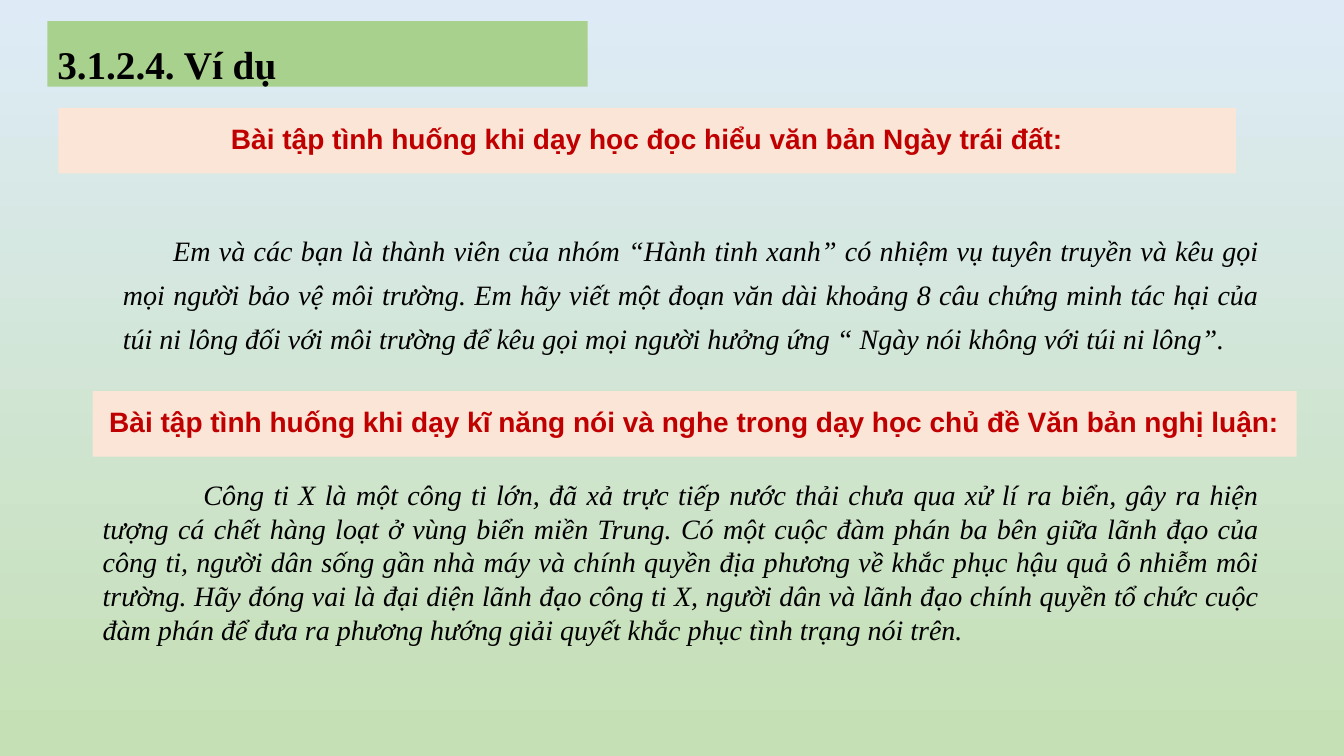
from dataclasses import dataclass, field
from typing import Any, Optional

import pptx
import pptx.dml.color
import pptx.enum.shapes
import pptx.enum.text
import pptx.util

Inches = pptx.util.Inches
ALIGN = pptx.enum.text.PP_ALIGN
ANCHOR = pptx.enum.text.MSO_ANCHOR
AUTO_SIZE = pptx.enum.text.MSO_AUTO_SIZE

COLORS = {
    "sky": "DEEBF7",
    "meadow": "C5E0B4",
    "leaf": "A9D18E",
    "peach": "FBE5D6",
    "red": "C00000",
    "black": "000000",
}


@dataclass
class Block:
    left: float
    top: float
    width: float
    height: float
    text: str
    fill: Optional[str] = None
    style: dict[str, Any] = field(default_factory=dict)


def rgb(name: str) -> pptx.dml.color.RGBColor:
    return pptx.dml.color.RGBColor.from_string(COLORS[name])


def write_text(frame, text: str, *, font: str = "Times New Roman", size: int = 20,
               color: str = "black", bold: bool = False, italic: bool = False,
               align=ALIGN.JUSTIFY, anchor=ANCHOR.TOP, grow: bool = True,
               line_spacing: float = 1.0, space: int = 0, indent: float = 0) -> None:
    frame.word_wrap = True
    frame.auto_size = AUTO_SIZE.SHAPE_TO_FIT_TEXT if grow else AUTO_SIZE.NONE
    frame.vertical_anchor = anchor
    para = frame.paragraphs[0]
    para.alignment = align
    para.line_spacing = line_spacing
    para.space_before = para.space_after = pptx.util.Pt(space)
    if indent:
        properties = para._p.get_or_add_pPr()
        properties.set("marL", "0")
        properties.set("indent", str(Inches(indent)))
    span = para.add_run()
    span.text = text
    span.font.name = font
    span.font.size = pptx.util.Pt(size)
    span.font.bold = bold
    span.font.italic = italic
    span.font.color.rgb = rgb(color)


def draw_block(page, block: Block) -> None:
    place = [Inches(n) for n in (block.left, block.top, block.width, block.height)]
    if block.fill:
        box = page.shapes.add_shape(pptx.enum.shapes.MSO_SHAPE.RECTANGLE, *place)
        box.shadow.inherit = False
        box.fill.solid()
        box.fill.fore_color.rgb = rgb(block.fill)
        box.line.fill.background()
    else:
        box = page.shapes.add_textbox(*place)
    write_text(box.text_frame, block.text, **block.style)


def paint_background(page) -> None:
    fill = page.background.fill
    fill.gradient()
    fill.gradient_angle = 90
    for stop, position, name in zip(fill.gradient_stops, (0, 1), ("meadow", "sky")):
        stop.position = position
        stop.color.rgb = rgb(name)


BANNER = dict(font="Arial", color="red", bold=True, align=ALIGN.CENTER,
              anchor=ANCHOR.MIDDLE, grow=False, line_spacing=0.9)

BLOCKS = [
    # Section heading
    Block(0.47, 0.21, 5.36, 0.65, "3.1.2.4. Ví dụ", "leaf",
          dict(size=28, bold=True, line_spacing=1.3, space=4)),
    # First exercise
    Block(0.58, 1.07, 11.68, 0.65,
          "Bài tập tình huống khi dạy học đọc hiểu văn bản Ngày trái đất:",
          "peach", BANNER),
    Block(1.12, 2.17, 11.47, 1.37,
          "Em và các bạn là thành viên của nhóm “Hành tinh xanh” có nhiệm vụ tuyên "
          "truyền và kêu gọi mọi người bảo vệ môi trường. Em hãy viết một đoạn văn dài "
          "khoảng 8 câu chứng minh tác hại của túi ni lông đối với môi trường để kêu gọi "
          "mọi người hưởng ứng “ Ngày nói không với túi ni lông”.",
          style=dict(italic=True, line_spacing=1.3, space=3, indent=0.5)),
    # Second exercise
    Block(0.92, 3.88, 11.94, 0.65,
          "Bài tập tình huống khi dạy kĩ năng nói và nghe trong dạy học chủ đề "
          "Văn bản nghị luận:",
          "peach", BANNER),
    Block(0.92, 4.69, 11.67, 1.82,
          "Công ti X là một công ti lớn, đã xả trực tiếp nước thải chưa qua xử lí ra "
          "biển, gây ra hiện tượng cá chết hàng loạt ở vùng biển miền Trung. Có một cuộc "
          "đàm phán ba bên giữa lãnh đạo của công ti, người dân sống gần nhà máy và chính "
          "quyền địa phương về khắc phục hậu quả ô nhiễm môi trường. Hãy đóng vai là đại "
          "diện lãnh đạo công ti X, người dân và lãnh đạo chính quyền tổ chức cuộc đàm "
          "phán để đưa ra phương hướng giải quyết khắc phục tình trạng nói trên.",
          style=dict(italic=True, indent=1)),
]


def main() -> None:
    deck = pptx.Presentation()
    deck.slide_width, deck.slide_height = Inches(13.33), Inches(7.5)
    page = deck.slides.add_slide(deck.slide_layouts[6])
    paint_background(page)
    for block in BLOCKS:
        draw_block(page, block)
    deck.save("out.pptx")


if __name__ == "__main__":
    main()
